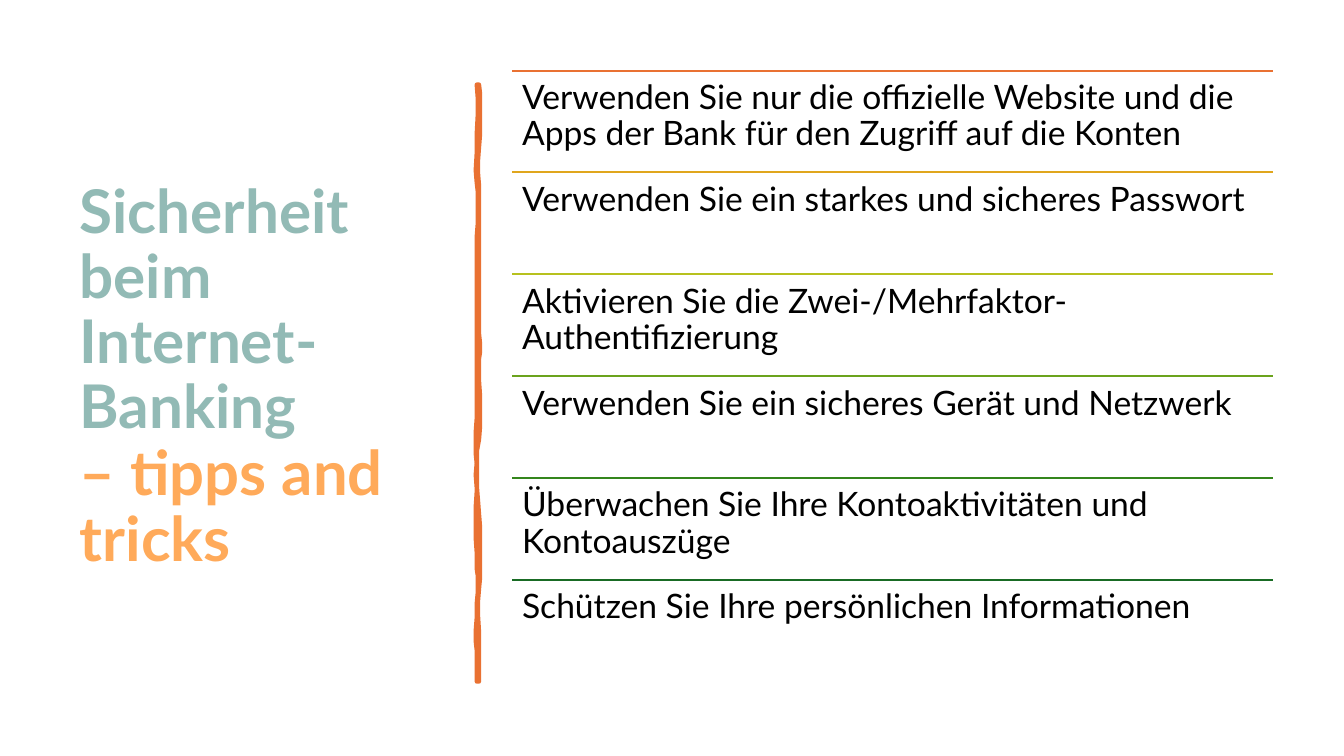
from dataclasses import dataclass

from lxml import etree
from pptx import Presentation
from pptx.dml.color import RGBColor
from pptx.enum.shapes import MSO_CONNECTOR
from pptx.enum.text import MSO_ANCHOR
from pptx.oxml.ns import qn
from pptx.util import Emu, Pt

PX = 9144
STRAIGHT = MSO_CONNECTOR.STRAIGHT
TOP, MIDDLE = MSO_ANCHOR.TOP, MSO_ANCHOR.MIDDLE


@dataclass(frozen=True)
class Theme:
    """Colours, font and type sizes of the slide."""
    font: str = "Lato"
    sage: str = "92BAB5"
    apricot: str = "FFAA5A"
    orange: str = "E97132"
    ink: str = "000000"
    title_size: int = 43
    subtitle_size: int = 44
    tip_size: int = 24
    spacing: float = 0.9
    bar_line: float = 3.25
    rule_line: float = 1.5


THEME = Theme()

TIPS = [
    ("E97132", "Verwenden Sie nur die offizielle Website und die Apps der Bank für den Zugriff auf die Konten"),
    ("E0A61D", "Verwenden Sie ein starkes und sicheres Passwort"),
    ("B7C11E", "Aktivieren Sie die Zwei-/Mehrfaktor-Authentifizierung"),
    ("6BA31D", "Verwenden Sie ein sicheres Gerät und Netzwerk"),
    ("34861C", "Überwachen Sie Ihre Kontoaktivitäten und Kontoauszüge"),
    ("196B24", "Schützen Sie Ihre persönlichen Informationen"),
]

BAR_RIGHT = [
    (2, 0), (4, 18), (4, 35), (2, 62), (0, 89), (3, 111), (2, 142),
    (1, 173), (2, 178), (2, 210), (1, 241), (4, 258), (2, 272),
    (0, 286), (6, 330), (2, 352), (-2, 373), (-1, 400), (2, 426),
    (4, 452), (4, 480), (2, 500), (0, 519), (3, 566), (2, 592),
]
BAR_LEFT = [
    (0, 592), (1, 562), (-2, 560), (0, 529), (1, 499), (1, 486), (0, 473),
    (-1, 460), (-1, 411), (0, 393), (0, 375), (-2, 361), (0, 331),
    (1, 302), (-1, 289), (0, 251), (1, 214), (-1, 197), (0, 166),
    (1, 134), (2, 116), (0, 97), (-3, 79), (4, 20), (0, 0),
]


def rgb(value):
    """Turn a hex string into a colour."""
    return RGBColor.from_string(value)


def curve_points(controls, steps=6):
    """Sample a chain of cubic curves that share their end points."""
    points = [controls[0]]
    for i in range(0, len(controls) - 1, 3):
        for step in range(1, steps + 1):
            t = step / steps
            weights = ((1 - t) ** 3, 3 * t * (1 - t) ** 2, 3 * t * t * (1 - t), t ** 3)
            points.append(tuple(
                sum(w * c[axis] for w, c in zip(weights, controls[i:i + 4]))
                for axis in (0, 1)))
    return points


def add_text(slide, box, anchor, inset_y):
    """Add an empty wrapped text box and return its paragraph."""
    tf = slide.shapes.add_textbox(*(Emu(v * PX) for v in box)).text_frame
    tf.word_wrap = True
    tf.vertical_anchor = anchor
    tf.margin_left = tf.margin_right = Emu(10 * PX)
    tf.margin_top = tf.margin_bottom = Emu(inset_y * PX)
    p = tf.paragraphs[0]
    p.line_spacing = THEME.spacing
    return p


def add_run(p, text, size, color, bold=False):
    """Append one styled run to a paragraph."""
    r = p.add_run()
    r.text = text
    r.font.name = THEME.font
    r.font.size = Pt(size)
    r.font.bold = bold
    r.font.color.rgb = rgb(color)


def add_title(slide, box):
    """Write the two-coloured title in the middle of its box."""
    p = add_text(slide, box, MIDDLE, 5)
    add_run(p, "Sicherheit beim Internet-Banking", THEME.title_size, THEME.sage, True)
    p.add_line_break()
    add_run(p, "– tipps and tricks", THEME.subtitle_size, THEME.apricot, True)


def add_bar(slide, left, top):
    """Draw the hand-drawn upright bar from its top left corner."""
    outline = [(left + x, top + y)
               for x, y in curve_points(BAR_RIGHT) + curve_points(BAR_LEFT)]
    builder = slide.shapes.build_freeform(*outline[0], scale=PX)
    builder.add_line_segments(outline[1:], close=True)
    sp = builder.convert_to_shape()
    sp.shadow.inherit = False
    sp.fill.solid()
    sp.fill.fore_color.rgb = rgb(THEME.orange)
    sp.line.color.rgb = rgb(THEME.orange)
    sp.line.width = Pt(THEME.bar_line)


def add_rule(slide, left, top, width, color):
    """Draw a horizontal rule."""
    line = slide.shapes.add_connector(
        STRAIGHT, *(Emu(v * PX) for v in (left, top, left + width, top)))
    line.line.color.rgb = rgb(color)
    line.line.width = Pt(THEME.rule_line)
    etree.SubElement(line._element.spPr, qn("a:effectLst"))


def add_tips(slide, box):
    """Stack the tips in equal rows, each under its own rule."""
    left, top, width, height = box
    row = height // len(TIPS)
    for i, (color, text) in enumerate(TIPS):
        y = top + i * row
        add_rule(slide, left, y, width, color)
        p = add_text(slide, (left, y, width, row), TOP, 10)
        add_run(p, text, THEME.tip_size, THEME.ink)


def main():
    """Build the slide and save it."""
    prs = Presentation()
    prs.slide_width, prs.slide_height = Emu(1333 * PX), Emu(750 * PX)
    slide = prs.slides.add_slide(prs.slide_layouts[6])
    add_title(slide, (69, 70, 374, 611))
    add_bar(slide, 473, 84)
    add_tips(slide, (508, 70, 755, 606))
    prs.save("out.pptx")


if __name__ == "__main__":
    main()
